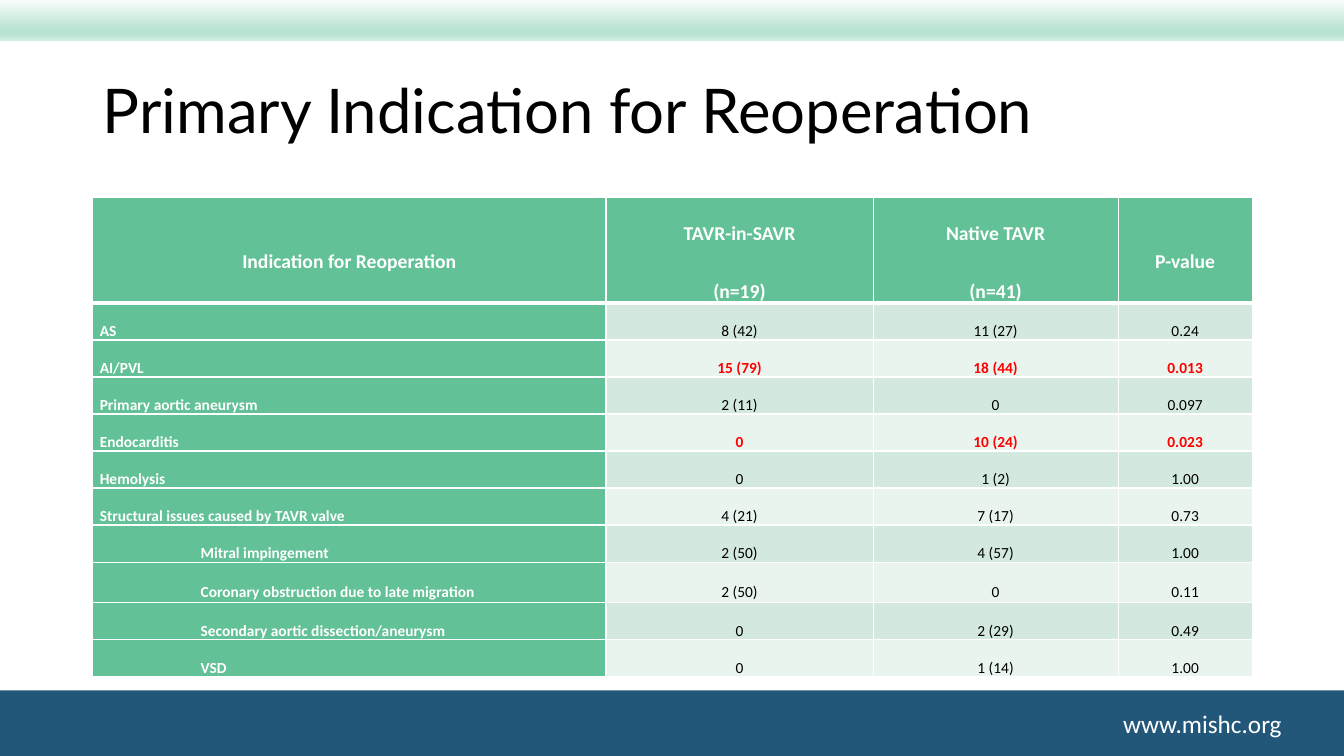
from copy import deepcopy

from pptx import Presentation
from pptx.dml.color import RGBColor
from pptx.enum.shapes import MSO_SHAPE
from pptx.enum.text import MSO_ANCHOR, PP_ALIGN
from pptx.oxml import parse_xml
from pptx.oxml.ns import nsdecls, qn
from pptx.util import Inches, Pt

WHITE = RGBColor(0xFF, 0xFF, 0xFF)
BLACK = RGBColor(0x00, 0x00, 0x00)
RED = RGBColor(0xFF, 0x00, 0x00)
NAVY = RGBColor(0x23, 0x57, 0x7A)
GREEN = RGBColor(0x62, 0xC1, 0x96)
BAND_DARK = RGBColor(0xD3, 0xE9, 0xDD)
BAND_LIGHT = RGBColor(0xEA, 0xF4, 0xEF)
BANNER_STOPS = [
    (0, RGBColor(0xF7, 0xFC, 0xFA)),
    (0.74, RGBColor(0xB8, 0xE3, 0xD0)),
    (0.83, RGBColor(0xB8, 0xE3, 0xD0)),
    (1, RGBColor(0xD0, 0xEC, 0xE0)),
]

COLUMN_WIDTHS = [5.09, 2.65, 2.43, 1.33]
ROW_HEIGHTS = [0.57] + [0.33] * 7 + [0.4, 0.28, 0.33]
HEADERS = ["Indication for Reoperation", "TAVR-in-SAVR\n(n=19)", "Native TAVR\n(n=41)", "P-value"]
INDICATIONS = [
    ("AS", "8 (42)", "11 (27)", "0.24"),
    ("AI/PVL", "15 (79)", "18 (44)", "0.013"),
    ("Primary aortic aneurysm", "2 (11)", "0", "0.097"),
    ("Endocarditis", "0", "10 (24)", "0.023"),
    ("Hemolysis", "0", "1 (2)", "1.00"),
    ("Structural issues caused by TAVR valve", "4 (21)", "7 (17)", "0.73"),
    ("Mitral impingement", "2 (50)", "4 (57)", "1.00"),
    ("Coronary obstruction due to late migration", "2 (50)", "0", "0.11"),
    ("Secondary aortic dissection/aneurysm", "0", "2 (29)", "0.49"),
    ("VSD", "0", "1 (14)", "1.00"),
]
FIRST_SUBTYPE = 6
SIGNIFICANCE = 0.05


def write_text(frame, text, *, size, color, font="Calibri", bold=False, align=PP_ALIGN.LEFT,
               line_spacing=1.0, space_after=0, indent=0):
    frame.text = text
    for paragraph in frame.paragraphs:
        paragraph.alignment = align
        paragraph.line_spacing = line_spacing
        paragraph.space_after = Pt(space_after)
        if indent:
            paragraph_properties = paragraph._p.get_or_add_pPr()
            paragraph_properties.set("marL", str(Inches(indent)))
            paragraph_properties.set("indent", "0")
        paragraph.font.name = font
        paragraph.font.size = Pt(size)
        paragraph.font.bold = bold
        paragraph.font.color.rgb = color


class SlideBuilder:
    def __init__(self, presentation):
        self.font = "Calibri"
        self.title_font = "Lato"
        self.slide = presentation.slides.add_slide(presentation.slide_layouts[5])

    def bar(self, left, top, width, height):
        shape = self.slide.shapes.add_shape(
            MSO_SHAPE.RECTANGLE, Inches(left), Inches(top), Inches(width), Inches(height))
        shape.shadow.inherit = False
        shape.line.fill.background()
        return shape

    def solid_bar(self, *box, color):
        shape = self.bar(*box)
        shape.fill.solid()
        shape.fill.fore_color.rgb = color

    def gradient_bar(self, *box, stops):
        shape = self.bar(*box)
        shape.fill.gradient()
        shape.fill.gradient_angle = 270
        stop_list = shape._element.spPr.find(".//" + qn("a:gsLst"))
        while len(stop_list) < len(stops):
            stop_list.append(deepcopy(stop_list[0]))
        for stop, (position, color) in zip(shape.fill.gradient_stops, stops):
            stop.position = position
            stop.color.rgb = color

    def title(self, text, left, top, width, height):
        shape = self.slide.shapes.title
        shape.left, shape.top = Inches(left), Inches(top)
        shape.width, shape.height = Inches(width), Inches(height)
        shape.text_frame.vertical_anchor = MSO_ANCHOR.MIDDLE
        write_text(shape.text_frame, text, size=44, color=BLACK, font=self.title_font,
                   line_spacing=0.9)

    def label(self, text, left, top, width, height):
        shape = self.slide.shapes.add_textbox(
            Inches(left), Inches(top), Inches(width), Inches(height))
        shape.text_frame.word_wrap = True
        write_text(shape.text_frame, text, size=18, color=WHITE, font=self.font)

    def cell(self, cell, text, fill, top_border=1, bottom_border=1, **text_format):
        cell.margin_left = cell.margin_right = Inches(0.07)
        cell.margin_top = cell.margin_bottom = 0
        cell.vertical_anchor = MSO_ANCHOR.MIDDLE
        cell_properties = cell._tc.get_or_add_tcPr()
        borders = {"lnL": 1, "lnR": 1, "lnT": top_border, "lnB": bottom_border}
        for side, points in borders.items():
            cell_properties.append(parse_xml(
                f'<a:{side} {nsdecls("a")} w="{Pt(points)}"><a:solidFill>'
                f'<a:srgbClr val="{WHITE}"/></a:solidFill></a:{side}>'))
        cell.fill.solid()
        cell.fill.fore_color.rgb = fill
        write_text(cell.text_frame, text, font=self.font, line_spacing=2.0, **text_format)

    def indication_table(self, left, top):
        table = self.slide.shapes.add_table(
            len(ROW_HEIGHTS), len(COLUMN_WIDTHS), Inches(left), Inches(top),
            Inches(sum(COLUMN_WIDTHS)), Inches(sum(ROW_HEIGHTS))).table
        for column, width in zip(table.columns, COLUMN_WIDTHS):
            column.width = Inches(width)
        for row, height in zip(table.rows, ROW_HEIGHTS):
            row.height = Inches(height)
        for column, header in enumerate(HEADERS):
            self.cell(table.cell(0, column), header, GREEN, bottom_border=3, size=14,
                      color=WHITE, bold=True, align=PP_ALIGN.CENTER,
                      space_after=8 if "\n" in header else 3)
        for index, (name, *values) in enumerate(INDICATIONS):
            row = index + 1
            top_border = 3 if index == 0 else 1
            self.cell(table.cell(row, 0), name, GREEN, top_border, size=11, color=WHITE,
                      bold=True, space_after=3, indent=1 if index >= FIRST_SUBTYPE else 0)
            significant = float(values[-1]) < SIGNIFICANCE
            for column, value in enumerate(values, 1):
                self.cell(table.cell(row, column), value,
                          BAND_LIGHT if index % 2 else BAND_DARK, top_border, size=11,
                          color=RED if significant else BLACK, bold=significant,
                          align=PP_ALIGN.CENTER,
                          space_after=3 if column == len(values) else 8)


def main():
    presentation = Presentation()
    presentation.slide_width = Inches(13.33)
    presentation.slide_height = Inches(7.5)
    builder = SlideBuilder(presentation)
    builder.solid_bar(0, 6.85, 13.33, 0.74, color=NAVY)
    builder.gradient_bar(0, 0, 13.33, 0.4, stops=BANNER_STOPS)
    builder.label("www.mishc.org", 11.04, 6.98, 1.79, 0.4)
    builder.title("Primary Indication for Reoperation", 0.92, 0.4, 11.5, 1.45)
    builder.indication_table(0.92, 1.96)
    presentation.save("out.pptx")


if __name__ == "__main__":
    main()
